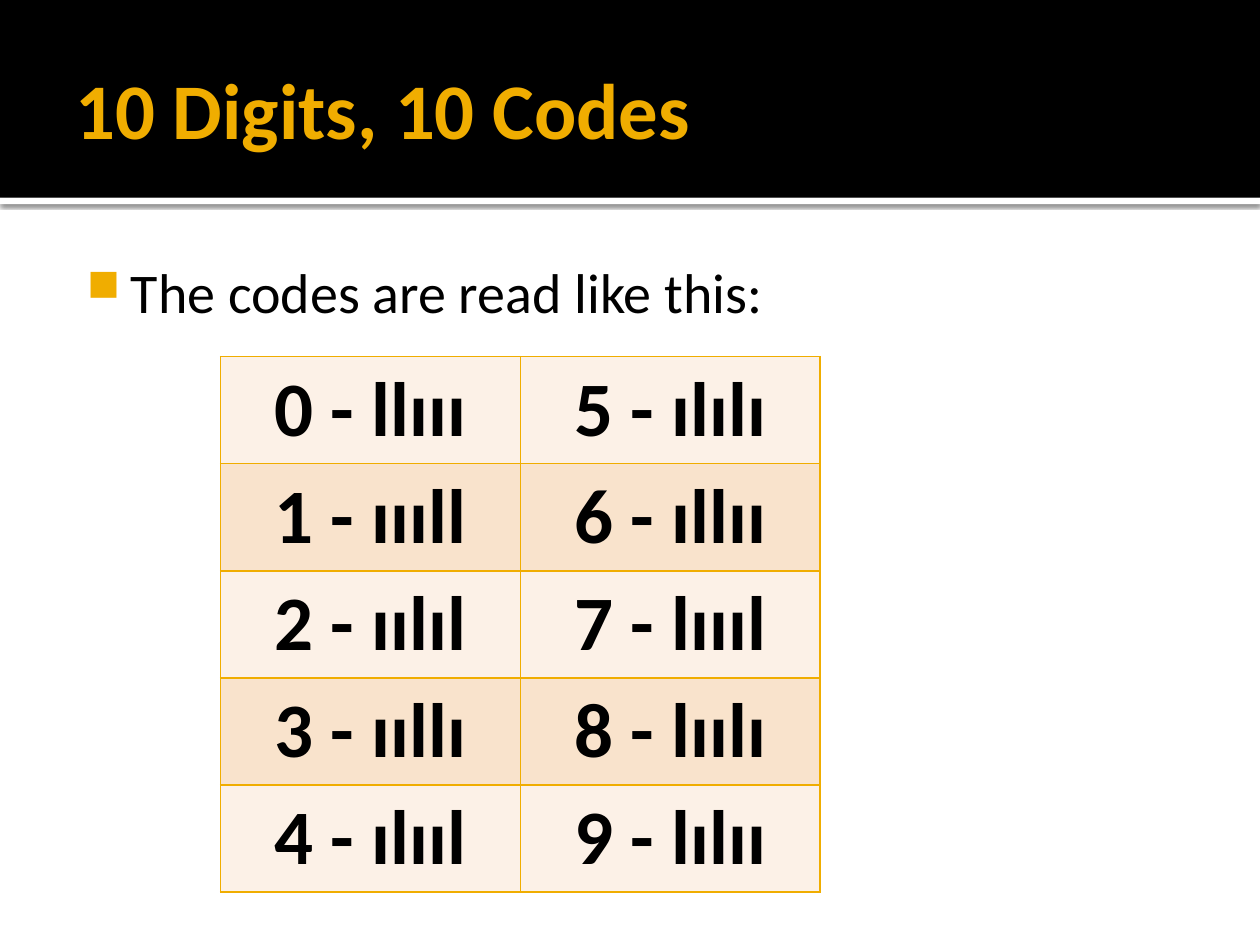
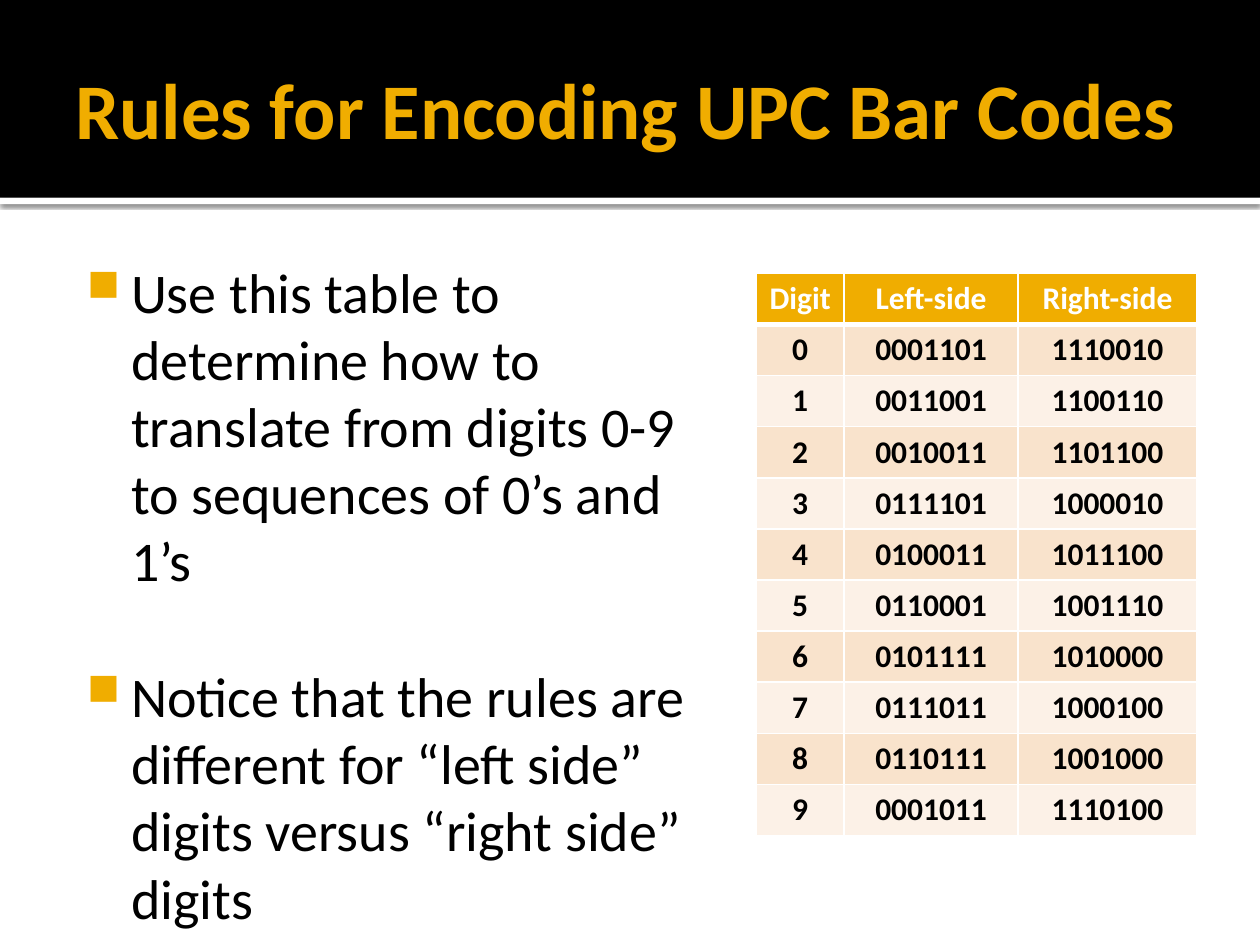
from dataclasses import dataclass

import pptx
import pptx.dml.color
import pptx.enum.shapes
import pptx.enum.text
import pptx.oxml
import pptx.oxml.ns
import pptx.util
from pptx.util import Inches

COLORS = {
    "white": "FFFFFF",
    "black": "000000",
    "gold": "F0AD00",
    "light": "FCF1E7",
    "peach": "F9E3CC",
}
FONT = "Calibri"
MIDDLE = pptx.enum.text.MSO_ANCHOR.MIDDLE
TOP = pptx.enum.text.MSO_ANCHOR.TOP
CENTER = pptx.enum.text.PP_ALIGN.CENTER
BULLET_SIZE = 32
LINE_HEIGHT = 39

FRAME = {
    "word_wrap": True,
    "auto_size": pptx.enum.text.MSO_AUTO_SIZE.NONE,
    "margin_bottom": Inches(0.05),
}
TITLE_FRAME = FRAME | {
    "vertical_anchor": MIDDLE,
    "margin_left": Inches(0.1),
    "margin_top": Inches(0.05),
    "margin_right": Inches(0.05),
}
BODY_FRAME = FRAME | {
    "vertical_anchor": TOP,
    "margin_left": Inches(0.06),
    "margin_top": Inches(0.1),
    "margin_right": Inches(0.1),
}

BAR_CODES = ["llııı", "ıııll", "ıılıl", "ııllı", "ılııl",
             "ılılı", "ıllıı", "lıııl", "lıılı", "lılıı"]
LEFT_SIDE = ["0001101", "0011001", "0010011", "0111101", "0100011",
             "0110001", "0101111", "0111011", "0110111", "0001011"]
FLIP = str.maketrans("01", "10")


@dataclass(frozen=True)
class Box:
    left: float
    top: float
    width: float
    height: float

    def lengths(self) -> list:
        return [Inches(v) for v in (self.left, self.top, self.width, self.height)]


@dataclass(frozen=True)
class TableStyle:
    size: int
    border: str
    bands: tuple[str, str]
    anchor: object
    header: bool = False


def assign(target, values: dict) -> None:
    for name, value in values.items():
        setattr(target, name, value)


def rgb(color: str):
    return pptx.dml.color.RGBColor.from_string(COLORS[color])


def xml(tag: str, attributes: str, content: str = ""):
    ns = pptx.oxml.ns.nsdecls("a")
    return pptx.oxml.parse_xml(f"<a:{tag} {ns} {attributes}>{content}</a:{tag}>")


def srgb(color: str, content: str = "") -> str:
    return f'<a:srgbClr val="{COLORS[color]}">{content}</a:srgbClr>'


def write(p, text: str, size: int, color: str, bold: bool) -> None:
    r = p.add_run()
    r.text = text
    assign(r.font, {"name": FONT, "size": pptx.util.Pt(size), "bold": bold})
    r.font.color.rgb = rgb(color)


def add_band(s, box: Box, color: str):
    rectangle = pptx.enum.shapes.MSO_SHAPE.RECTANGLE
    sp = s.shapes.add_shape(rectangle, *box.lengths())
    sp.shadow.inherit = False
    sp.fill.solid()
    sp.fill.fore_color.rgb = rgb(color)
    sp.line.fill.background()
    return sp


def add_text_frame(s, box: Box, frame: dict):
    tf = s.shapes.add_textbox(*box.lengths()).text_frame
    assign(tf, frame)
    return tf


def add_titled_slide(prs, title: str):
    s = prs.slides.add_slide(prs.slide_layouts[6])
    strip = add_band(s, Box(0, 1.57, 10, 0.05), "white")
    effects = strip.element.spPr.find(pptx.oxml.ns.qn("a:effectLst"))
    shade = srgb("black", '<a:alpha val="60000"/>')
    effects.append(xml("outerShdw", 'blurRad="31750" dist="10160" dir="5400000"', shade))
    add_band(s, Box(0, 0, 10, 1.57), "black")
    tf = add_text_frame(s, Box(0.5, 0.17, 9, 1.37), TITLE_FRAME)
    write(tf.paragraphs[0], title, 45, "gold", True)
    return s


def add_bullets(s, box: Box, texts: list[str]) -> None:
    tf = add_text_frame(s, box, BODY_FRAME)
    for i, text in enumerate(texts):
        p = tf.add_paragraph() if i else tf.paragraphs[0]
        p.space_before = pptx.util.Pt(LINE_HEIGHT if i else 0)
        pPr = p._p.get_or_add_pPr()
        pPr.set("marL", str(Inches(0.48)))
        pPr.set("indent", str(Inches(-0.35)))
        pPr.append(xml("buClr", "", srgb("gold")))
        pPr.append(xml("buSzPct", 'val="80000"'))
        pPr.append(xml("buChar", 'char="■"'))
        write(p, text, BULLET_SIZE, "black", False)


def set_borders(cell, color: str, top: int = 1, bottom: int = 1) -> None:
    tcPr = cell._tc.get_or_add_tcPr()
    widths = {"lnL": 1, "lnR": 1, "lnT": top, "lnB": bottom}
    for i, (tag, width) in enumerate(widths.items()):
        fill = f"<a:solidFill>{srgb(color)}</a:solidFill>"
        tcPr.insert(i, xml(tag, f'w="{pptx.util.Pt(width)}"', fill))


def add_grid(s, left: float, top: float, widths: list[float], row_height: float,
             rows: list[tuple], style: TableStyle) -> None:
    box = Box(left, top, sum(widths), row_height * len(rows))
    table = s.shapes.add_table(len(rows), len(widths), *box.lengths()).table
    assign(table, {"first_row": False, "horz_banding": False})
    for column, width in zip(table.columns, widths):
        column.width = Inches(width)
    for i, row in enumerate(rows):
        is_header = style.header and i == 0
        below_header = style.header and i == 1
        for j, text in enumerate(row):
            cell = table.cell(i, j)
            cell.vertical_anchor = style.anchor
            cell.fill.solid()
            cell.fill.fore_color.rgb = rgb("gold" if is_header else style.bands[i % 2])
            set_borders(cell, style.border, 3 if below_header else 1, 3 if is_header else 1)
            p = cell.text_frame.paragraphs[0]
            p.alignment = CENTER
            write(p, text, style.size, "white" if is_header else "black", True)


def build_digit_codes(prs) -> None:
    s = add_titled_slide(prs, "10 Digits, 10 Codes")
    add_bullets(s, Box(0.5, 1.94, 9, 5.06), ["The codes are read like this:"])
    labels = [f"{digit} - {code}" for digit, code in enumerate(BAR_CODES)]
    style = TableStyle(44, "gold", ("light", "peach"), TOP)
    add_grid(s, 1.75, 2.83, [2.38] * 2, 0.85, list(zip(labels[:5], labels[5:])), style)


def build_encoding_rules(prs) -> None:
    s = add_titled_slide(prs, "Rules for Encoding UPC Bar Codes")
    add_bullets(s, Box(0.5, 1.94, 5.42, 5.23), [
        "Use this table to determine how to translate from digits 0-9 "
        "to sequences of 0’s and 1’s",
        "Notice that the rules are different for “left side” digits "
        "versus “right side” digits",
    ])
    rows = [("Digit", "Left-side", "Right-side")]
    rows += [(str(digit), code, code.translate(FLIP)) for digit, code in enumerate(LEFT_SIDE)]
    style = TableStyle(18, "white", ("light", "peach"), MIDDLE, header=True)
    add_grid(s, 6, 2.17, [0.7, 1.38, 1.42], 0.4, rows, style)


def main() -> None:
    prs = pptx.Presentation()
    assign(prs, {"slide_width": Inches(10), "slide_height": Inches(7.5)})
    build_digit_codes(prs)
    build_encoding_rules(prs)
    prs.save("out.pptx")


if __name__ == "__main__":
    main()
